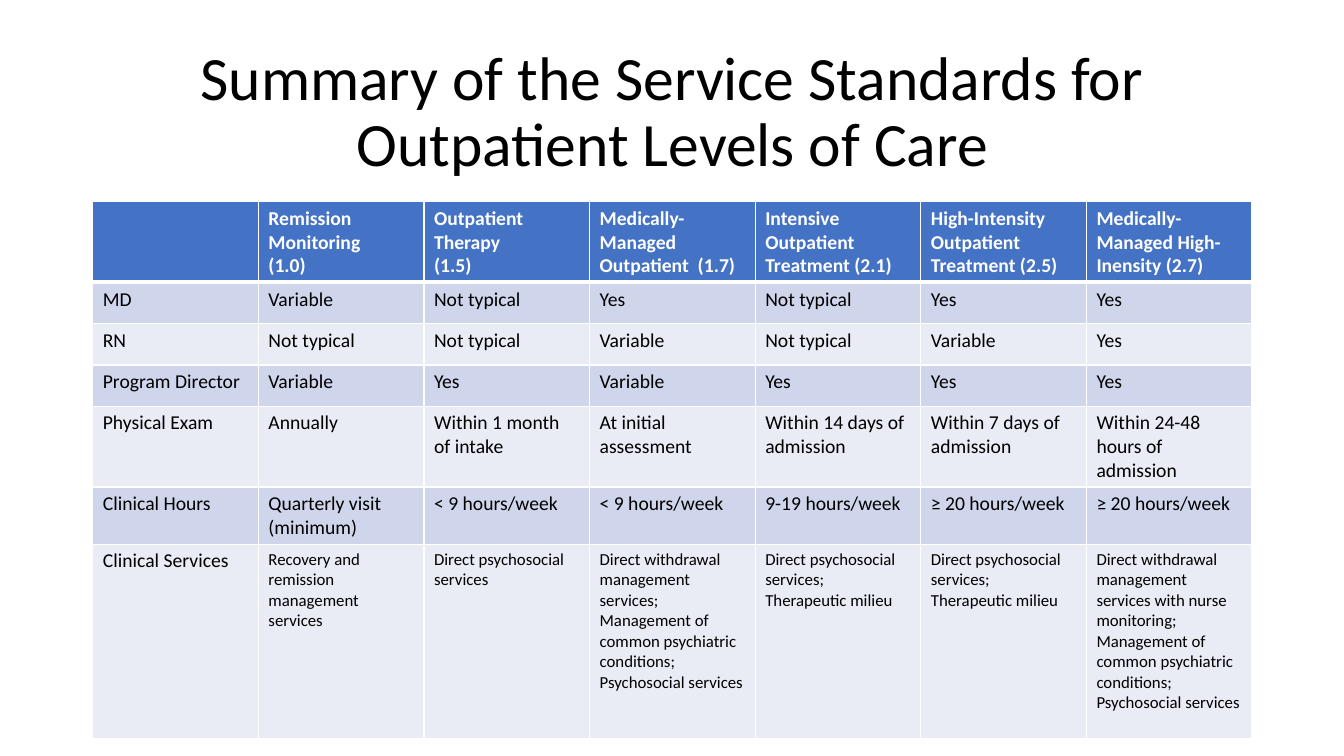
from lxml import etree
from pptx import Presentation, util as u
from pptx.dml.color import RGBColor
from pptx.enum import text
from pptx.oxml import ns

BLACK = RGBColor(0x00, 0x00, 0x00)
WHITE = RGBColor(0xFF, 0xFF, 0xFF)
HEADER_BLUE = RGBColor(0x44, 0x72, 0xC4)
BAND_DARK = RGBColor(0xCF, 0xD5, 0xEA)
BAND_LIGHT = RGBColor(0xE9, 0xEB, 0xF5)

TITLE = "Summary of the Service Standards for Outpatient Levels of Care"
MANAGED = "Management of common psychiatric conditions;\nPsychosocial services"
MILIEU = "Direct psychosocial services;\nTherapeutic milieu"
STANDARDS = [
    ["", "Remission Monitoring\n(1.0)", "Outpatient Therapy\n(1.5)",
     "Medically-Managed Outpatient  (1.7)", "Intensive Outpatient Treatment (2.1)",
     "High-Intensity Outpatient Treatment (2.5)", "Medically-Managed High-Inensity (2.7)"],
    ["MD", "Variable", "Not typical", "Yes", "Not typical", "Yes", "Yes"],
    ["RN", "Not typical", "Not typical", "Variable", "Not typical", "Variable", "Yes"],
    ["Program Director", "Variable", "Yes", "Variable", "Yes", "Yes", "Yes"],
    ["Physical Exam", "Annually", "Within 1 month of intake", "At initial assessment",
     "Within 14 days of admission", "Within 7 days of admission",
     "Within 24-48 hours of admission"],
    ["Clinical Hours", "Quarterly visit (minimum)", "< 9 hours/week", "< 9 hours/week",
     "9-19 hours/week", "≥ 20 hours/week", "≥ 20 hours/week"],
    ["Clinical Services", "Recovery and remission management services",
     "Direct psychosocial services",
     "Direct withdrawal management services;\n" + MANAGED, MILIEU, MILIEU,
     "Direct withdrawal management services with nurse monitoring;\n" + MANAGED],
]


class StandardsPage:
    """Hold the text style and the current slide, and add elements to it."""

    def __init__(self, page, font="Calibri"):
        self.page = page
        self.font = font

    def fill_text(self, frame, words, **style):
        frame.text = words
        for para in frame.paragraphs:
            for span in para.runs:
                for name, value in {"name": self.font, **style}.items():
                    if name == "color":
                        span.font.color.rgb = value
                    else:
                        setattr(span.font, name, value)

    def title(self, words, left, top, width, height):
        box = self.page.shapes.add_textbox(*map(u.Inches, (left, top, width, height)))
        frame = box.text_frame
        frame.word_wrap = True
        frame.vertical_anchor = text.MSO_ANCHOR.MIDDLE
        self.fill_text(frame, words, size=u.Pt(44), color=BLACK)
        para = frame.paragraphs[0]
        para.alignment = text.PP_ALIGN.CENTER
        para.line_spacing = 0.9

    def borders(self, cell, top, bottom):
        properties = cell._tc.get_or_add_tcPr()
        for side, points in {"L": 1, "R": 1, "T": top, "B": bottom}.items():
            line = etree.SubElement(properties, ns.qn("a:ln" + side), w=str(u.Pt(points)))
            fill = etree.SubElement(line, ns.qn("a:solidFill"))
            etree.SubElement(fill, ns.qn("a:srgbClr"), val=str(WHITE))

    def table(self, rows, left, top, width, height, row_height, last_height):
        shape = self.page.shapes.add_table(
            len(rows), len(rows[0]), *map(u.Inches, (left, top, width, height)))
        last = len(rows) - 1
        for r, words_in_row in enumerate(rows):
            shape.table.rows[r].height = u.Inches(last_height if r == last else row_height)
            band = HEADER_BLUE if r == 0 else BAND_DARK if r % 2 else BAND_LIGHT
            for c, words in enumerate(words_in_row):
                cell = shape.table.cell(r, c)
                self.borders(cell, 3 if r == 1 else 1, 3 if r == 0 else 1)
                cell.fill.solid()
                cell.fill.fore_color.rgb = band
                self.fill_text(cell.text_frame, words, bold=r == 0,
                               size=u.Pt(12 if r == last and c else 14),
                               color=BLACK if r else WHITE)
        shape.height = u.Inches(height)


def main():
    deck = Presentation()
    deck.slide_width, deck.slide_height = u.Inches(13.33), u.Inches(7.5)
    page = StandardsPage(deck.slides.add_slide(deck.slide_layouts[6]))
    page.title(TITLE, 0.92, 0.4, 11.5, 1.45)
    page.table(STANDARDS, 0.92, 2, 11.5, 5.28, row_height=0.41, last_height=1.93)
    deck.save("out.pptx")


if __name__ == "__main__":
    main()
